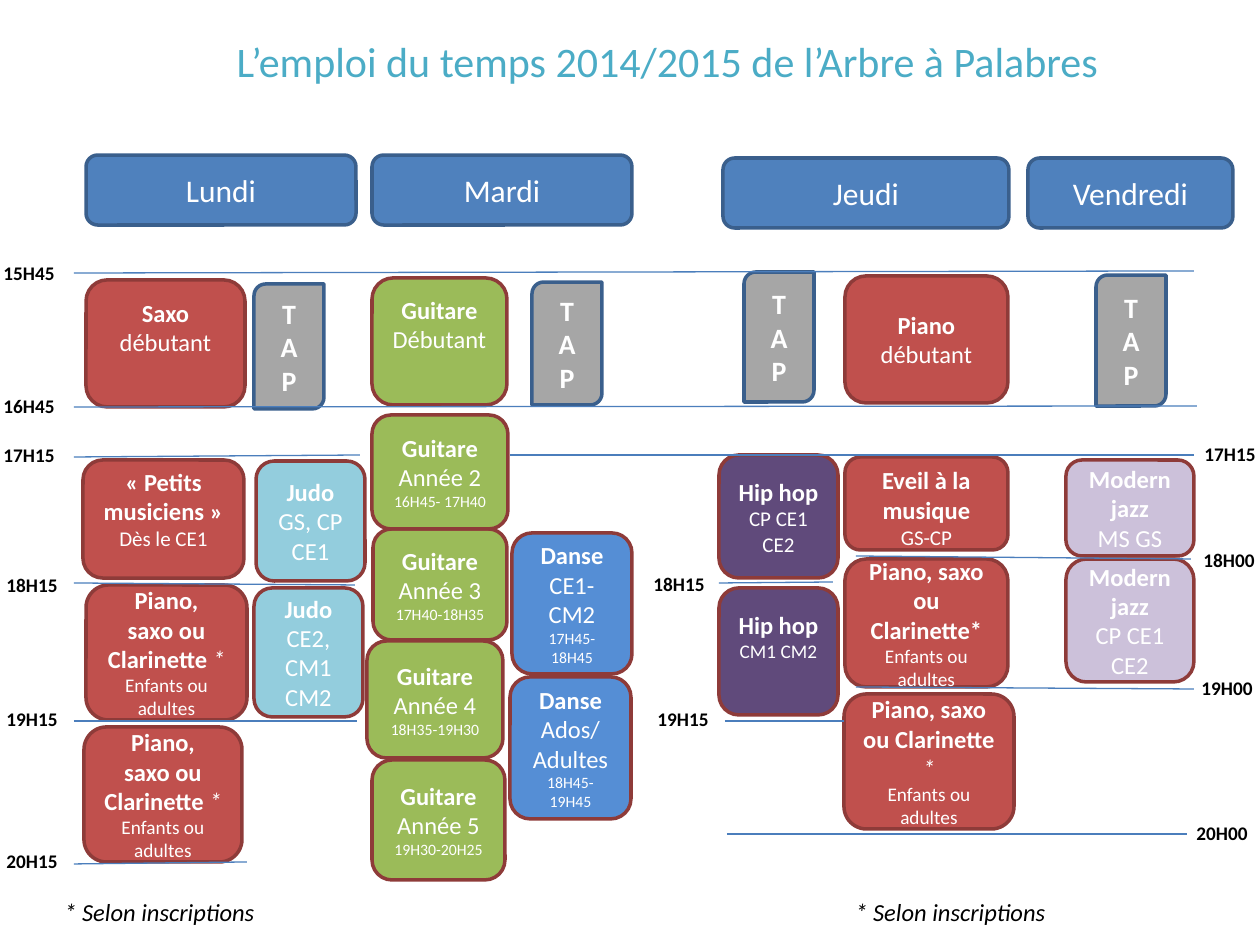
import pptx
import pptx.util
import pptx.oxml
import pptx.dml.color
import pptx.enum.shapes
import pptx.enum.text

PX = 7257
SHAPE = pptx.enum.shapes.MSO_SHAPE
ALIGN = pptx.enum.text.PP_ALIGN
ANCHOR = pptx.enum.text.MSO_ANCHOR
RED, GREEN, CYAN, BLUE = "C0504D", "9BBB59", "93CDDD", "558ED5"
PURPLE, LILAC, GREY, HEADER = "604A7B", "CCC1DA", "A6A6A6", "4F81BD"
MAROON, NAVY = "8E3B39", "3A5F8C"


def rgb(value):
    return pptx.dml.color.RGBColor.from_string(value)


def add_text(tf, text, size=14, color="FFFFFF", bold=False, italic=False,
             align=ALIGN.CENTER, same_line=False):
    p = tf.paragraphs[-1]
    if p.runs and not same_line:
        p = tf.add_paragraph()
    p.alignment = align
    r = p.add_run()
    r.text = text
    r.font.name = "Calibri"
    r.font.size = pptx.util.Pt(size)
    r.font.bold = bold
    r.font.italic = italic
    r.font.color.rgb = rgb(color)


prs = pptx.Presentation()
prs.slide_width = 1260 * PX
prs.slide_height = 945 * PX
s = prs.slides.add_slide(prs.slide_layouts[6])

ADULTS = [("Enfants ou adultes", 11)]
PIANO = ["Piano,", "saxo ou Clarinette "]
courses = [
    (86, 280, 159, 127, RED, 32, ["Saxo "], "débutant", []),
    (83, 460, 161, 118, RED, 21, ["«\u00a0Petits musiciens\u00a0»"], "", [("Dès le CE1", 12)]),
    (256, 461, 109, 120, CYAN, 0, ["Judo"], "", [("GS, CP CE1", 14)]),
    (254, 588, 109, 129, CYAN, 0, ["Judo"], "", [("CE2, CM1 CM2", 14)]),
    (372, 760, 133, 120, GREEN, 0, ["Guitare"], "", [("Année 5", 14), ("19H30-20H25", 9)]),
    (367, 641, 136, 117, GREEN, 0, ["Guitare"], "", [("Année 4", 14), ("18H35-19H30", 9)]),
    (373, 529, 134, 111, GREEN, 0, ["Guitare"], "", [("Année 3", 14), ("17H40-18H35", 9)]),
    (372, 415, 136, 114, GREEN, 0, ["Guitare"], "", [("Année 2", 14), ("16H45- 17H40", 9)]),
    (372, 278, 135, 127, GREEN, 34, ["Guitare"], "", [("Débutant", 14)]),
    (512, 533, 120, 141, BLUE, 0, ["Danse"], "", [("CE1-CM2", 14), ("17H45-18H45", 9)]),
    (510, 677, 121, 142, BLUE, 0, ["Danse"], "", [("Ados/ Adultes", 14), ("18H45-19H45", 9)]),
    (845, 276, 163, 127, RED, 0, ["Piano"], "", [("débutant", 14)]),
    (845, 457, 163, 93, RED, -8, ["Eveil à la musique"], "", [("GS-CP", 12)]),
    (719, 455, 119, 123, PURPLE, 0, ["Hip hop"], "", [("CP CE1 CE2", 12)]),
    (1066, 460, 128, 96, LILAC, 0, ["Modern jazz"], "", [("MS GS", 14)]),
    (1066, 559, 128, 123, LILAC, 0, ["Modern jazz"], "", [("CP CE1 CE2", 14)]),
    (719, 588, 119, 127, PURPLE, 30, ["Hip hop"], "", [("CM1 CM2", 11)]),
    (86, 585, 161, 135, RED, 0, PIANO, "*", ADULTS),
    (84, 727, 158, 135, RED, 0, PIANO, "*", ADULTS),
    (845, 559, 163, 128, RED, 0, ["Piano, saxo ou Clarinette*"], "", ADULTS),
    (844, 694, 170, 135, RED, 0, ["Piano, saxo ou Clarinette "], "*", ADULTS),
]
blocks = [(SHAPE.ROUNDED_RECTANGLE, MAROON, 14, True) + course for course in courses]
for x, y, h in [(254, 284, 125), (532, 282, 123), (744, 272, 130), (1096, 275, 131)]:
    blocks.append((SHAPE.ROUND_2_DIAG_RECTANGLE, NAVY, 16, True,
                   x, y, 70, h, GREY, 0, ["T", "A", "P"], "", []))
for day, x, y, w in [("Lundi", 86, 155, 270), ("Mardi", 372, 155, 260),
                     ("Jeudi", 723, 158, 286), ("Vendredi", 1028, 158, 205)]:
    blocks.append((SHAPE.FLOWCHART_ALTERNATE_PROCESS, NAVY, 18, False,
                   x, y, w, 70, HEADER, 0, [day], "", []))

for kind, edge, size, bold, x, y, w, h, fill, shift, titles, tail, details in blocks:
    sp = s.shapes.add_shape(kind, x * PX, y * PX, w * PX, h * PX)
    sp.shadow.inherit = False
    sp.fill.solid()
    sp.fill.fore_color.rgb = rgb(fill)
    sp.line.color.rgb = rgb(edge)
    sp.line.width = pptx.util.Pt(2)
    tf = sp.text_frame
    tf.word_wrap = True
    tf.vertical_anchor = ANCHOR.MIDDLE
    tf.margin_top = (6 + max(-shift, 0)) * PX
    tf.margin_bottom = (6 + max(shift, 0)) * PX
    for title in titles:
        add_text(tf, title, size=size, bold=bold)
    if tail:
        add_text(tf, tail, italic=tail == "*", same_line=True)
    for detail, detail_size in details:
        add_text(tf, detail, size=detail_size)

lines = [
    (74, 273, 1194, 271), (74, 457, 360, 455), (510, 455, 1194, 455),
    (74, 407, 1197, 406), (74, 583, 355, 585), (856, 556, 1191, 559),
    (856, 687, 1194, 689), (74, 721, 357, 721), (74, 864, 247, 862),
    (727, 834, 1187, 834), (725, 721, 844, 721), (719, 583, 833, 582),
]
for x1, y1, x2, y2 in lines:
    c = s.shapes.add_connector(pptx.enum.shapes.MSO_CONNECTOR.STRAIGHT,
                               x1 * PX, y1 * PX, x2 * PX, y2 * PX)
    c.line.color.rgb = rgb("4B7EBC")
    c.line.width = pptx.util.Pt(0.75)
    c._element.spPr.append(pptx.oxml.parse_xml(
        '<a:effectLst xmlns:a="http://schemas.openxmlformats.org/drawingml/2006/main"/>'))

hour = dict(size=11, color="000000", bold=True, align=ALIGN.LEFT)
note = dict(size=14, color="000000", italic=True, align=ALIGN.LEFT)
labels = [("L’emploi du temps 2014/2015 de l’Arbre à Palabres", 125, 29, 1085, 115,
           dict(size=24, color="4BACC6"))]
for text, x, y in [
    ("15H45", -9, 255), ("16H45", -9, 388), ("17H15", -9, 437), ("18H15", -6, 567),
    ("19H15", -6, 701), ("20H15", -6, 843), ("18H15", 641, 566), ("19H15", 645, 701),
    ("17H15", 1192, 436), ("18H00", 1191, 542), ("19H00", 1189, 670), ("20H00", 1184, 815),
]:
    labels.append((text, x, y, 100, 37, hour))
for x in (52, 843):
    labels.append(("* Selon inscriptions", x, 891, 272, 43, note))

for text, x, y, w, h, style in labels:
    tf = s.shapes.add_textbox(x * PX, y * PX, w * PX, h * PX).text_frame
    tf.word_wrap = True
    add_text(tf, text, **style)

prs.save("out.pptx")
